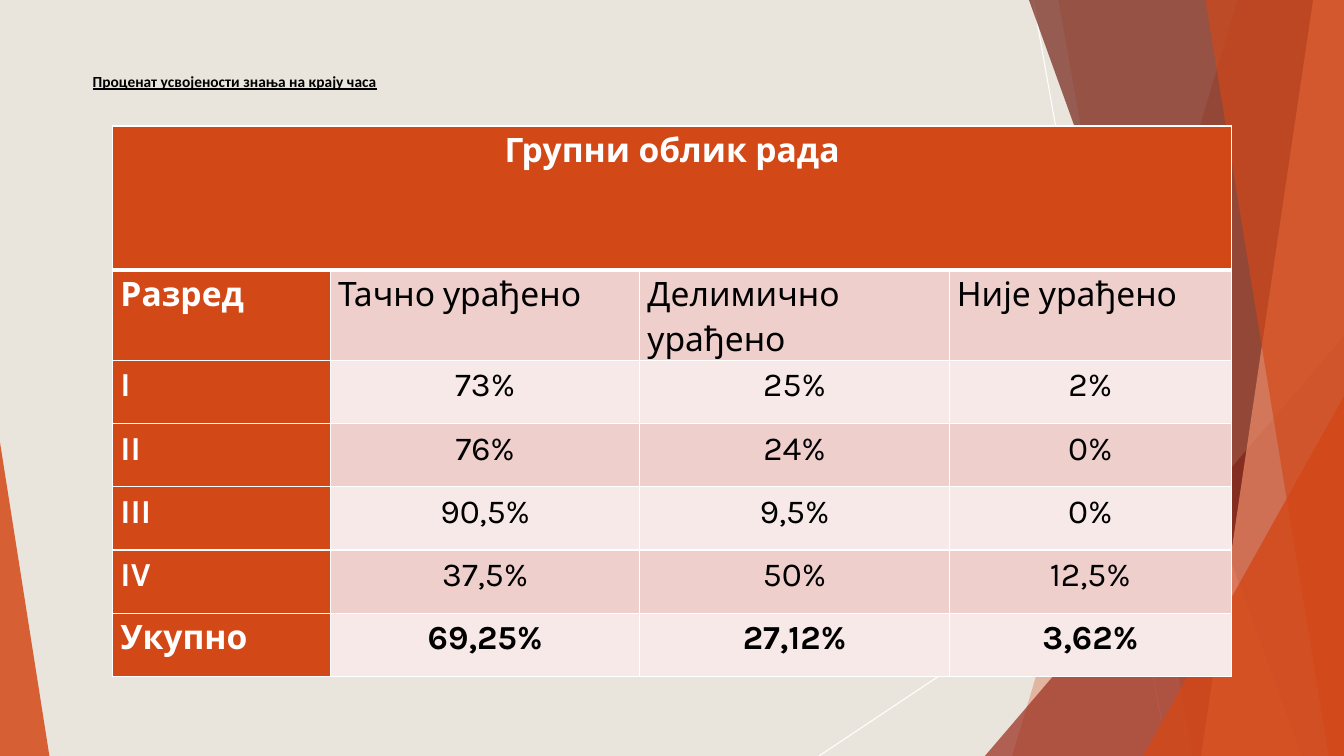
import dataclasses

import lxml.etree
import pptx
import pptx.dml.color
import pptx.enum.shapes
import pptx.enum.text
import pptx.oxml.ns
import pptx.util

Pt = pptx.util.Pt
qn = pptx.oxml.ns.qn
ALIGN = pptx.enum.text.PP_ALIGN


@dataclasses.dataclass(frozen=True)
class Theme:
    background: str = "E9E5DC"
    accent: str = "D34817"
    brick: str = "9B2D1F"
    maroon: str = "742217"
    salmon: str = "EF8C6A"
    row_dark: str = "EFCFCC"
    row_light: str = "F7E9E8"
    white: str = "FFFFFF"
    black: str = "000000"
    title_font: str = "Calibri"
    table_font: str = "Karla"
    title_size: float = 11
    table_size: float = 24


THEME = Theme()
WIDTH, HEIGHT = 960, 540

COLUMN_WIDTHS = [155.5, 221, 221, 201.6]
HEADER_HEIGHT, ROW_HEIGHT = 103, 45.2
TABLE_HEADING = "Групни облик рада"
RESULTS = [
    ["Разред", "Тачно урађено", "Делимично урађено", "Није урађено"],
    ["I", "73%", "25%", "2%"],
    ["II", "76%", "24%", "0%"],
    ["III", "90,5%", "9,5%", "0%"],
    ["IV", "37,5%", "50%", "12,5%"],
    ["Укупно", "69,25%", "27,12%", "3,62%"],
]


def rgb(color):
    return pptx.dml.color.RGBColor.from_string(color)


def paint(shape, color, opacity):
    shape.shadow.inherit = False
    shape.line.fill.background()
    shape.fill.solid()
    shape.fill.fore_color.rgb = rgb(color)
    tint = shape.fill._xPr.find(qn("a:solidFill"))[0]
    lxml.etree.SubElement(tint, qn("a:alpha"), val=str(opacity * 1000))


def add_ray(slide, start, end):
    ray = slide.shapes.add_connector(
        pptx.enum.shapes.MSO_CONNECTOR.STRAIGHT, *map(Pt, start + end))
    ray.line.color.rgb = rgb(THEME.white)
    ray.line.width = Pt(0.75)
    lxml.etree.SubElement(ray._element.spPr, qn("a:effectLst"))


def add_band(slide, top_x, bottom_x, color, opacity):
    outline = slide.shapes.build_freeform(Pt(top_x), 0)
    corners = [(WIDTH, 0), (WIDTH, HEIGHT), (bottom_x, HEIGHT)]
    outline.add_line_segments([(Pt(x), Pt(y)) for x, y in corners], close=True)
    paint(outline.convert_to_shape(), color, opacity)


def add_wedge(slide, left, top, width, apex, color, opacity):
    wedge = slide.shapes.add_shape(
        pptx.enum.shapes.MSO_SHAPE.ISOSCELES_TRIANGLE,
        Pt(left), Pt(top), Pt(width), Pt(HEIGHT - top))
    wedge.adjustments[0] = apex
    paint(wedge, color, opacity)


def add_backdrop(slide):
    slide.background.fill.solid()
    slide.background.fill.fore_color.rgb = rgb(THEME.background)
    add_ray(slide, (738, 0), (834, HEIGHT))
    add_ray(slide, (WIDTH, 290), (585, HEIGHT))
    add_band(slide, 884, 723, THEME.accent, 30)
    add_band(slide, 756, 852, THEME.accent, 20)
    add_wedge(slide, 703.5, 240, 256.5, 1, THEME.brick, 72)
    add_band(slide, 735, 929.5, THEME.maroon, 70)
    add_band(slide, 938, 858, THEME.salmon, 70)
    add_band(slide, 861, 949, THEME.accent, 65)
    add_wedge(slide, 816.5, 283, 143.5, 1, THEME.accent, 80)
    add_wedge(slide, 0, 316, 35.3, 0, THEME.accent, 85)


def style_font(font, name, size, color, bold):
    font.name = name
    font.size = Pt(size)
    font.color.rgb = rgb(color)
    font.bold = bold


def set_title(slide, wording):
    title = slide.shapes.title
    title.left, title.top, title.width, title.height = map(Pt, (59, 48, 890, 42))
    frame = title.text_frame
    frame.text = wording
    frame.word_wrap = True
    frame.auto_size = pptx.enum.text.MSO_AUTO_SIZE.NONE
    frame.vertical_anchor = pptx.enum.text.MSO_ANCHOR.TOP
    paragraph = frame.paragraphs[0]
    paragraph.alignment = ALIGN.LEFT
    style_font(paragraph.font, THEME.title_font, THEME.title_size, THEME.black, True)
    paragraph.font.underline = True


def set_borders(cell, widths):
    properties = cell._tc.get_or_add_tcPr()
    for side, width in zip("LRTB", widths):
        border = lxml.etree.SubElement(
            properties, qn(f"a:ln{side}"), w=str(Pt(width)))
        fill = lxml.etree.SubElement(border, qn("a:solidFill"))
        lxml.etree.SubElement(fill, qn("a:srgbClr"), val=THEME.white)


def fill_cell(cell, wording, fill, color, bold, alignment, borders=(1, 1, 1, 1)):
    set_borders(cell, borders)
    cell.fill.solid()
    cell.fill.fore_color.rgb = rgb(fill)
    cell.margin_left = cell.margin_right = Pt(5.4)
    cell.margin_top = cell.margin_bottom = 0
    cell.text = wording
    paragraph = cell.text_frame.paragraphs[0]
    paragraph.alignment = alignment
    paragraph.line_spacing = 1.15
    style_font(paragraph.font, THEME.table_font, THEME.table_size, color, bold)


def add_results(slide):
    row_count = len(RESULTS) + 1
    table = slide.shapes.add_table(
        row_count, len(COLUMN_WIDTHS), Pt(80.6), Pt(90), Pt(sum(COLUMN_WIDTHS)),
        Pt(HEADER_HEIGHT + ROW_HEIGHT * len(RESULTS))).table
    for column, width in zip(table.columns, COLUMN_WIDTHS):
        column.width = Pt(width)
    for index, row in enumerate(table.rows):
        row.height = Pt(ROW_HEIGHT if index else HEADER_HEIGHT)

    for index in range(len(COLUMN_WIDTHS)):
        fill_cell(table.cell(0, index), "" if index else TABLE_HEADING, THEME.accent,
                  THEME.white, True, ALIGN.CENTER, (1, 1, 1, 3))
    table.cell(0, 0).merge(table.cell(0, len(COLUMN_WIDTHS) - 1))

    for r, record in enumerate(RESULTS, start=1):
        band = THEME.row_dark if r % 2 else THEME.row_light
        borders = (1, 1, 3 if r == 1 else 1, 1)
        for c, wording in enumerate(record):
            is_label = c == 0
            fill_cell(
                table.cell(r, c), wording,
                THEME.accent if is_label else band,
                THEME.white if is_label else THEME.black,
                is_label or r == len(RESULTS),
                ALIGN.LEFT if is_label or r == 1 else ALIGN.CENTER,
                borders)


def main():
    deck = pptx.Presentation()
    deck.slide_width, deck.slide_height = Pt(WIDTH), Pt(HEIGHT)
    slide = deck.slides.add_slide(deck.slide_layouts.get_by_name("Title Only"))
    add_backdrop(slide)
    set_title(slide, "Проценат усвојености знања на крају часа")
    add_results(slide)
    deck.save("out.pptx")


if __name__ == "__main__":
    main()
